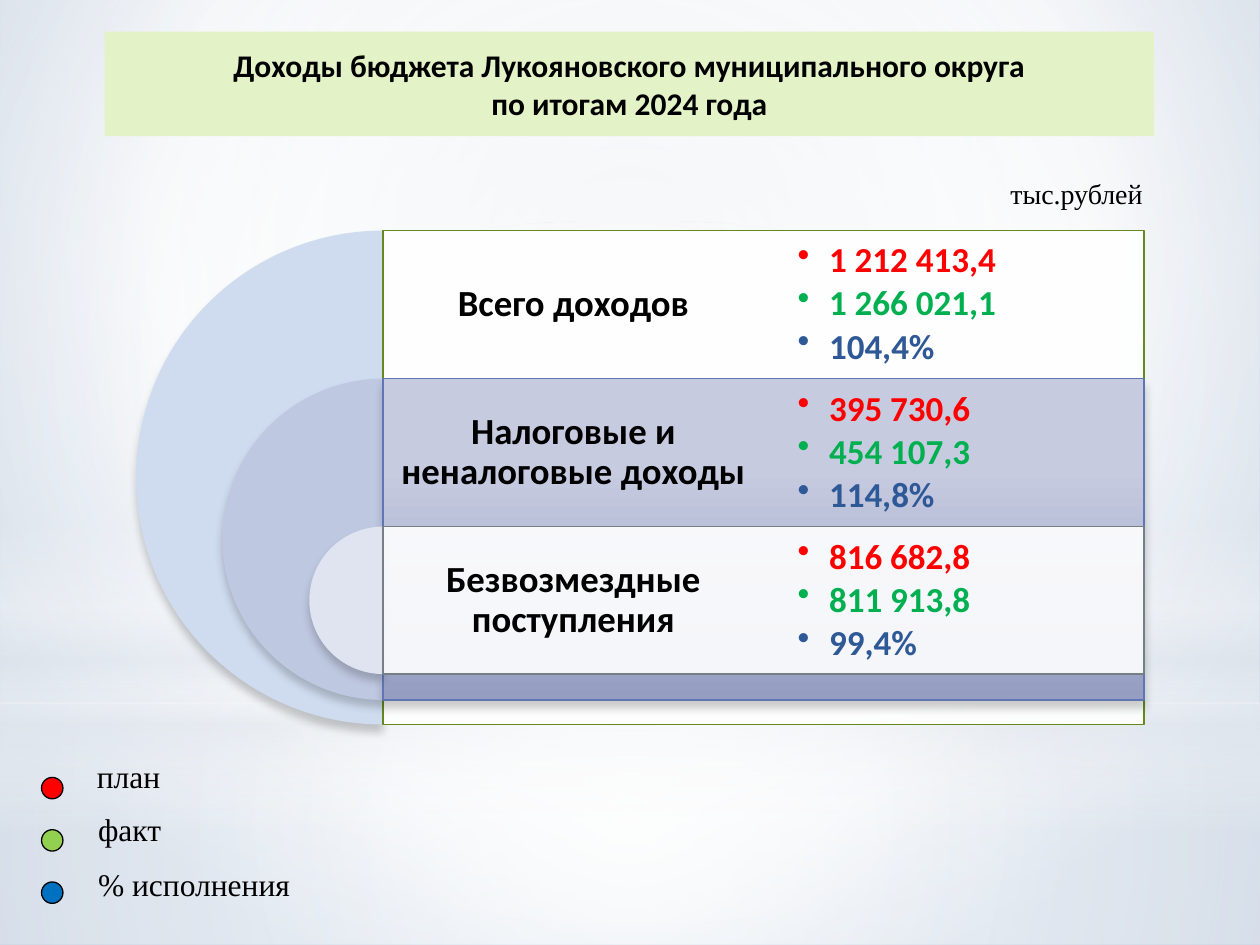
from lxml import etree
from pptx import Presentation
from pptx.dml.color import RGBColor
from pptx.enum import shapes, text
from pptx.oxml import ns
from pptx.util import Inches, Pt

BLACK = RGBColor(0, 0, 0)
WHITE = RGBColor(0xFF, 0xFF, 0xFF)
TITLE_GREEN = RGBColor(0xE3, 0xF2, 0xC7)
PLAN_RED = RGBColor(0xFF, 0, 0)
FACT_GREEN = RGBColor(0, 0xB0, 0x50)
SHARE_BLUE = RGBColor(0x2F, 0x58, 0x97)
LEGEND_GREEN = RGBColor(0x92, 0xD0, 0x50)
LEGEND_BLUE = RGBColor(0, 0x70, 0xC0)
OUTER_RING = RGBColor(0xCF, 0xDC, 0xF0)
MIDDLE_RING = RGBColor(0xBF, 0xC8, 0xE1)
INNER_RING = RGBColor(0xDF, 0xE4, 0xF0)
OLIVE = RGBColor(0x63, 0x89, 0x1F)
INDIGO = RGBColor(0x60, 0x76, 0xB4)
GREY = RGBColor(0x75, 0x80, 0x85)
MIST = RGBColor(0xE4, 0xE9, 0xEF)
PALE_BLUE = RGBColor(0xD7, 0xDF, 0xE8)
STEEL = RGBColor(0xA3, 0xB9, 0xD4)
LAVENDER = RGBColor(0xC6, 0xCB, 0xE0)
VIOLET = RGBColor(0x95, 0x9E, 0xC1)


def set_gradient(owner, stops, center=None):
    owner_fill = owner.background.fill if hasattr(owner, "background") else owner.fill
    owner_fill.solid()
    solid = owner.element.xpath(".//a:solidFill")[0]
    gradient = etree.Element(ns.qn("a:gradFill"), rotWithShape="1")
    stop_list = etree.SubElement(gradient, ns.qn("a:gsLst"))
    for position, color, opacity in stops:
        stop = etree.SubElement(stop_list, ns.qn("a:gs"), pos=str(position * 1000))
        value = etree.SubElement(stop, ns.qn("a:srgbClr"), val=str(color))
        if opacity < 100:
            etree.SubElement(value, ns.qn("a:alpha"), val=str(opacity * 1000))
    if center:
        path = etree.SubElement(gradient, ns.qn("a:path"))
        path.set("path", "circle")
        sides = {side: str(share * 1000) for side, share in zip("ltrb", center)}
        etree.SubElement(path, ns.qn("a:fillToRect"), **sides)
    else:
        etree.SubElement(gradient, ns.qn("a:lin"), ang="5400000", scaled="0")
    solid.getparent().replace(solid, gradient)


def add_run(paragraph, content, font_name, size, color, bold=False):
    run = paragraph.add_run()
    run.text = content
    run.font.name = font_name
    run.font.size = Pt(size)
    run.font.bold = bold
    run.font.color.rgb = color


presentation = Presentation()
presentation.slide_width = Inches(10)
presentation.slide_height = Inches(7.5)
slide = presentation.slides.add_slide(presentation.slide_layouts[5])
set_gradient(slide, [(0, PALE_BLUE, 100), (60, WHITE, 100), (100, STEEL, 100)], (20, 10, 20, 60))

middle = (50, 50, 50, 50)
backdrops = [
    (shapes.MSO_SHAPE.RECTANGLE, 5.58, 1.92, middle,
     [(0, WHITE, 91), (37, WHITE, 76), (100, MIST, 79)]),
    (shapes.MSO_SHAPE.RECTANGLE, 0, 5.58, middle,
     [(0, WHITE, 89), (48, WHITE, 62), (100, MIST, 79)]),
    (shapes.MSO_SHAPE.RECTANGLE, 4.12, 2.5, None,
     [(0, WHITE, 0), (29, WHITE, 30), (45, MIST, 40), (55, WHITE, 26), (65, MIST, 60),
      (100, WHITE, 0)]),
    (shapes.MSO_SHAPE.OVAL, 1.75, 5.58, middle, [(0, WHITE, 100), (56, WHITE, 0)]),
]
for geometry, top, height, center, stops in backdrops:
    backdrop = slide.shapes.add_shape(geometry, 0, Inches(top), Inches(10), Inches(height))
    backdrop.shadow.inherit = False
    backdrop.line.fill.background()
    set_gradient(backdrop, stops, center)

title = slide.shapes.title
title.left, title.top = Inches(0.83), Inches(0.25)
title.width, title.height = Inches(8.33), Inches(0.83)
outline = etree.SubElement(title.element.spPr, ns.qn("a:prstGeom"), prst="roundRect")
etree.SubElement(outline, ns.qn("a:avLst"))
title.fill.solid()
title.fill.fore_color.rgb = TITLE_GREEN
title.text_frame.vertical_anchor = text.MSO_ANCHOR.MIDDLE
for index, line in enumerate(["Доходы бюджета Лукояновского муниципального округа",
                              "по итогам 2024 года"]):
    paragraph = title.text_frame.paragraphs[0] if index == 0 else title.text_frame.add_paragraph()
    paragraph.alignment = text.PP_ALIGN.CENTER
    add_run(paragraph, line, "Calibri", 18, BLACK, True)
slide.shapes.element.append(title.element)

axis, first_top, row_height = 3.04, 1.83, 1.175
panel_width = 6.04
column_width = panel_width / 2
rows = [
    ("Всего доходов", 3.92, OUTER_RING, OLIVE, ["1 212 413,4", "1 266 021,1", "104,4%"]),
    ("Налоговые и неналоговые доходы", 2.55, MIDDLE_RING, INDIGO,
     ["395 730,6", "454 107,3", "114,8%"]),
    ("Безвозмездные поступления", 1.17, INNER_RING, GREY, ["816 682,8", "811 913,8", "99,4%"]),
]
for index, (label, size, ring_color, border, amounts) in enumerate(rows):
    top = first_top + index * row_height
    ring = slide.shapes.add_shape(shapes.MSO_SHAPE.PIE, Inches(axis - size / 2), Inches(top),
                                  Inches(size), Inches(size))
    ring.adjustments[0], ring.adjustments[1] = 54, 162
    ring.fill.solid()
    ring.fill.fore_color.rgb = ring_color
    ring.line.fill.background()

    panel = slide.shapes.add_shape(shapes.MSO_SHAPE.RECTANGLE, Inches(axis), Inches(top),
                                   Inches(panel_width), Inches(size))
    shaded = border == INDIGO
    if shaded:
        set_gradient(panel, [(28, LAVENDER, 100), (100, VIOLET, 100)])
    else:
        panel.fill.solid()
        panel.fill.fore_color.rgb = WHITE
        white = panel.element.xpath("p:spPr/a:solidFill/a:srgbClr")[0]
        etree.SubElement(white, ns.qn("a:alpha"), val="90000")
    panel.line.color.rgb = border
    panel.line.width = Pt(0.75)

    for shape in (ring, panel):
        shape.shadow.inherit = False
        if shape is ring or shaded:
            effects = shape.element.spPr.find(ns.qn("a:effectLst"))
            shadow = etree.SubElement(effects, ns.qn("a:outerShdw"), blurRad=str(Pt(5)),
                                      dist=str(Pt(4)), dir="5400000", rotWithShape="0")
            shade = etree.SubElement(shadow, ns.qn("a:srgbClr"), val=str(BLACK))
            etree.SubElement(shade, ns.qn("a:alpha"), val="20000")

    for column, inset in enumerate((0.09, 0.27)):
        box = slide.shapes.add_textbox(Inches(axis + column * column_width), Inches(top),
                                       Inches(column_width), Inches(row_height))
        frame = box.text_frame
        frame.word_wrap = True
        frame.vertical_anchor = text.MSO_ANCHOR.MIDDLE
        frame.margin_left = frame.margin_right = Inches(inset)
        frame.margin_top = frame.margin_bottom = Inches(inset)
        paragraph = frame.paragraphs[0]
        paragraph.line_spacing = 0.9
        if column == 0:
            paragraph.alignment = text.PP_ALIGN.CENTER
            add_run(paragraph, label, "Calibri", 21, BLACK, True)
            continue
        for number, (amount, color) in enumerate(zip(amounts, (PLAN_RED, FACT_GREEN, SHARE_BLUE))):
            if number:
                paragraph = frame.add_paragraph()
            properties = paragraph._p.get_or_add_pPr()
            properties.set("marL", str(Inches(0.25)))
            properties.set("indent", str(Inches(-0.25)))
            etree.SubElement(properties, ns.qn("a:buChar"), char="•")
            paragraph.level = 1
            paragraph.line_spacing = 0.9
            paragraph.space_after = Pt(3)
            add_run(paragraph, amount, "Calibri", 20, color, True)

for index, color in enumerate((PLAN_RED, LEGEND_GREEN, LEGEND_BLUE)):
    marker = slide.shapes.add_shape(shapes.MSO_SHAPE.OVAL, Inches(0.33),
                                    Inches(6.17 + index * 0.415), Inches(0.17), Inches(0.17))
    marker.shadow.inherit = False
    marker.fill.solid()
    marker.fill.fore_color.rgb = color
    marker.line.color.rgb = BLACK
    marker.line.width = Pt(0.75)

captions = [
    ("тыс.рублей", 7.92, 1.35, 1.42, 0.33, 16),
    ("план", 0.67, 5.96, 0.87, 0.4, 18),
    ("факт", 0.68, 6.38, 0.71, 0.4, 18),
    ("% исполнения", 0.68, 6.82, 1.88, 0.4, 18),
]
for content, left, top, width, height, size in captions:
    caption = slide.shapes.add_textbox(Inches(left), Inches(top), Inches(width), Inches(height))
    caption.text_frame.word_wrap = content != "факт"
    add_run(caption.text_frame.paragraphs[0], content, "Times New Roman", size, BLACK)

presentation.save("out.pptx")
